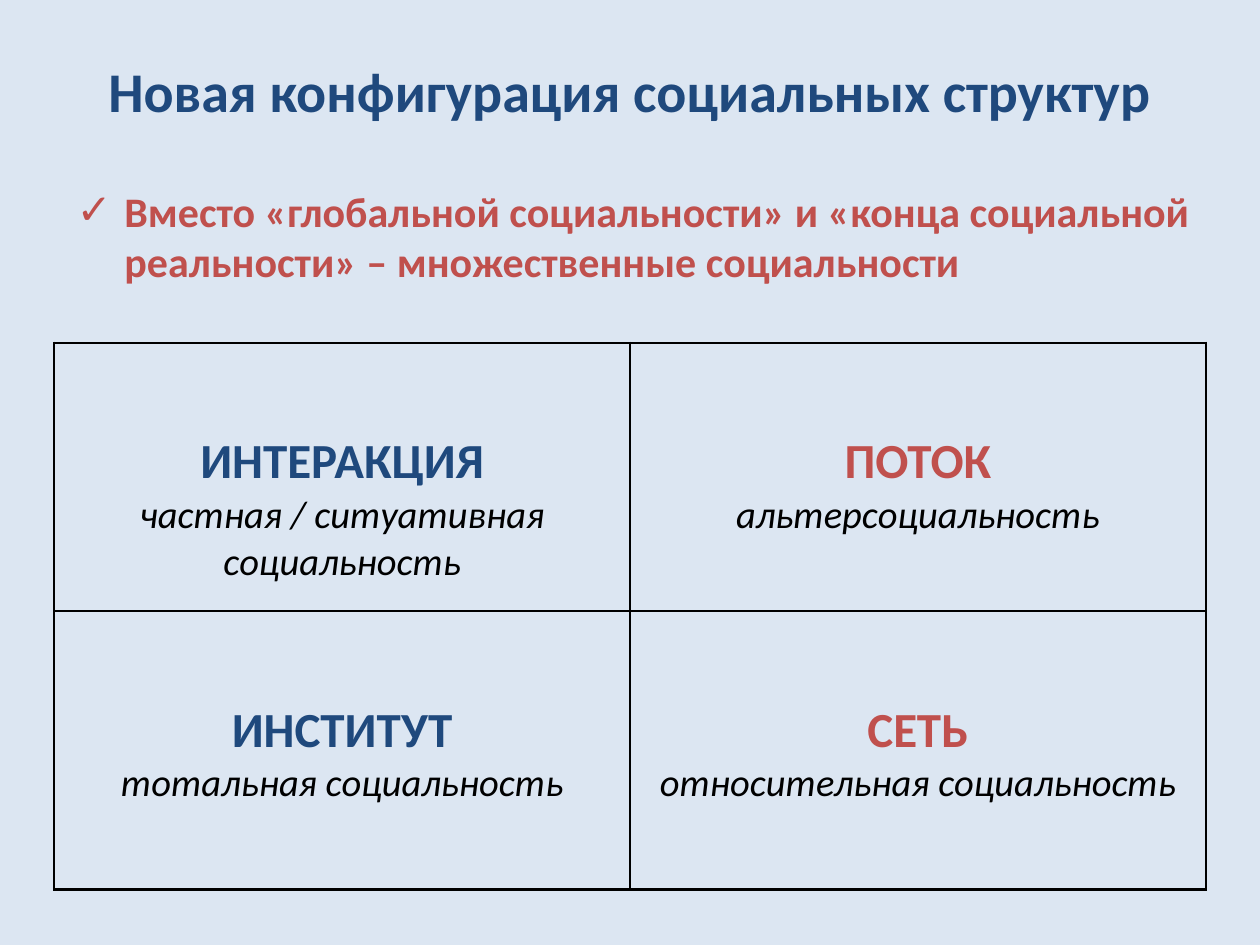
import pptx
import pptx.dml.color
import pptx.enum.text
import pptx.oxml
import pptx.oxml.ns
import pptx.util

Inches = pptx.util.Inches
Pt = pptx.util.Pt
CENTER = pptx.enum.text.PP_ALIGN.CENTER
MIDDLE = pptx.enum.text.MSO_ANCHOR.MIDDLE
TOP = pptx.enum.text.MSO_ANCHOR.TOP

FONT = "Calibri"
BACKGROUND, BLUE, RED, BLACK = "DCE6F2", "1F497D", "C0504D", "000000"
TITLE = "Новая конфигурация социальных структур"
THESIS = ("Вместо «глобальной социальности» и «конца социальной "
          "реальности» – множественные социальности")
STRUCTURES = [
    [("ИНТЕРАКЦИЯ", "частная / ситуативная социальность", BLUE),
     ("ПОТОК", "альтерсоциальность", RED)],
    [("ИНСТИТУТ", "тотальная социальность", BLUE),
     ("СЕТЬ", "относительная социальность", RED)],
]
ROW_HEIGHTS = [2.13, 2.21]
TABLE_LEFT, TABLE_TOP, TABLE_WIDTH = 0.43, 2.72, 9.14


def rgb(value):
    return pptx.dml.color.RGBColor.from_string(value)


def add_run(p, text, size, color, bold=False, italic=False):
    r = p.add_run()
    r.text = text
    r.font.name = FONT
    r.font.size = Pt(size)
    r.font.bold = bold
    r.font.italic = italic
    r.font.color.rgb = rgb(color)


def element(xml):
    return pptx.oxml.parse_xml(xml.replace(">", f" {pptx.oxml.ns.nsdecls('a')}>", 1))


def set_borders(cell):
    tc_pr = cell._tc.get_or_add_tcPr()
    for i, side in enumerate(("lnL", "lnR", "lnT", "lnB")):
        tc_pr.insert(i, element(
            f'<a:{side} w="{Pt(1.5)}"><a:solidFill><a:srgbClr val="{BLACK}"/>'
            f'</a:solidFill></a:{side}>'))


def add_title(s):
    sp = s.shapes.title
    sp.left, sp.top = Inches(0), Inches(0.36)
    sp.width, sp.height = Inches(10), Inches(0.71)
    tf = sp.text_frame
    tf.vertical_anchor = MIDDLE
    p = tf.paragraphs[0]
    p.alignment = CENTER
    add_run(p, TITLE, 32, BLUE, bold=True)


def add_thesis(s):
    sp = s.shapes.add_textbox(Inches(0.51), Inches(1.42), Inches(9.06), Inches(0.91))
    tf = sp.text_frame
    tf.word_wrap = True
    p = tf.paragraphs[0]
    add_run(p, THESIS, 24, RED, bold=True)
    p_pr = p._p.get_or_add_pPr()
    p_pr.set("marL", str(Inches(0.38)))
    p_pr.set("indent", str(Inches(-0.38)))
    p_pr.append(element(f'<a:buFont typeface="{FONT}"></a:buFont>'))
    p_pr.append(element('<a:buChar char="✓"></a:buChar>'))


def add_structures(s):
    rows, cols = len(STRUCTURES), len(STRUCTURES[0])
    table = s.shapes.add_table(
        rows, cols, Inches(TABLE_LEFT), Inches(TABLE_TOP),
        Inches(TABLE_WIDTH), Inches(sum(ROW_HEIGHTS))).table
    table.first_row = table.horz_banding = False
    for column in table.columns:
        column.width = Inches(TABLE_WIDTH / cols)
    for i, row in enumerate(STRUCTURES):
        table.rows[i].height = Inches(ROW_HEIGHTS[i])
        for j, (name, kind, color) in enumerate(row):
            cell = table.cell(i, j)
            cell.fill.background()
            set_borders(cell)
            cell.vertical_anchor = TOP
            cell.margin_left = cell.margin_right = Inches(0.07)
            cell.margin_top, cell.margin_bottom = Inches(0.71), Inches(0)
            tf = cell.text_frame
            p = tf.paragraphs[0]
            p.alignment = CENTER
            add_run(p, name, 28, color, bold=True)
            p = tf.add_paragraph()
            p.alignment = CENTER
            add_run(p, kind, 22, BLACK, italic=True)


def main():
    prs = pptx.Presentation()
    prs.slide_width, prs.slide_height = Inches(10), Inches(7.5)
    s = prs.slides.add_slide(prs.slide_layouts[5])
    s.background.fill.solid()
    s.background.fill.fore_color.rgb = rgb(BACKGROUND)
    add_title(s)
    add_structures(s)
    add_thesis(s)
    prs.save("out.pptx")


if __name__ == "__main__":
    main()
